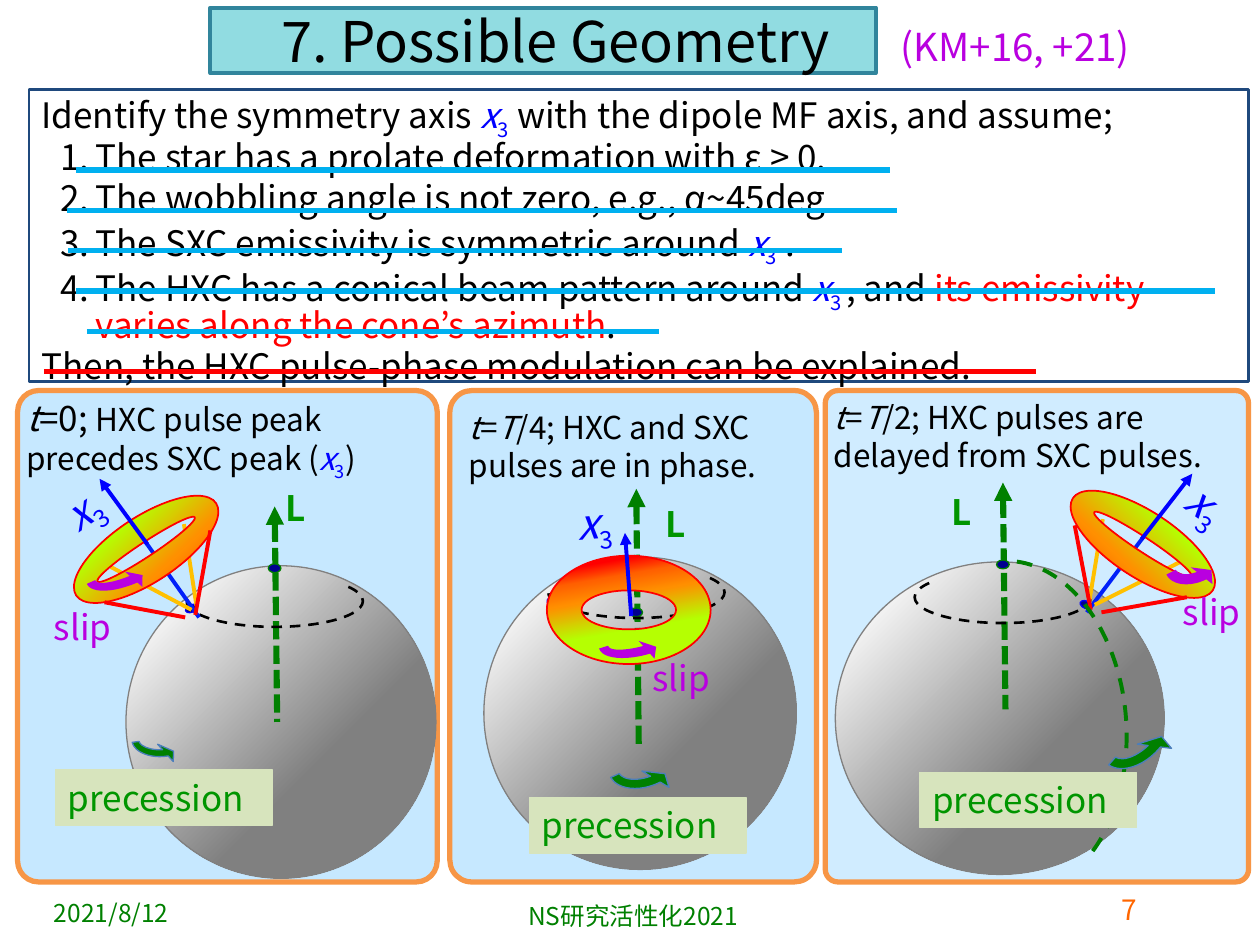
import pptx
import pptx.dml.color
import pptx.enum.dml
import pptx.enum.shapes
import pptx.enum.text
import pptx.oxml
import pptx.oxml.ns
import pptx.util
from lxml import etree

Inches, Pt = pptx.util.Inches, pptx.util.Pt
RGB = pptx.dml.color.RGBColor.from_string
SHAPE = pptx.enum.shapes.MSO_SHAPE
DASH = pptx.enum.dml.MSO_LINE
ALIGN = pptx.enum.text.PP_ALIGN
ANCHOR = pptx.enum.text.MSO_ANCHOR
qn = pptx.oxml.ns.qn

FONT = "Noto Sans CJK JP"
BLACK, BLUE, RED = RGB("000000"), RGB("0000FF"), RGB("FF0000")
GREEN, LEAF, PURPLE = RGB("008000"), RGB("009500"), RGB("B900E0")
ORANGE, AMBER, CYAN = RGB("F79646"), RGB("FFC000"), RGB("00B0F0")
NAVY, GRAY, STEEL = RGB("000090"), RGB("808080"), RGB("4B7EBC")
SKY, TEAL, TEAL_EDGE = RGB("98D6FF"), RGB("00AFBA"), RGB("31859C")
FRAME, SAGE, AXIS_BLUE, PAGE = RGB("1F497D"), RGB("D7E4BD"), RGB("0020F9"), RGB("FF6600")

# ---- Content: text is a list of (wording, format) runs ----
VAR = {"italic": True}
BLUE_VAR = {"italic": True, "color": BLUE}
BLUE_SUB = {"sub": True, "color": BLUE}
X3 = [("x", BLUE_VAR), ("3", BLUE_SUB)]
INTRO = [("Identify the symmetry axis ", {}), *X3, (" with the dipole MF axis, and assume;", {})]
ASSUMPTIONS = [
    [("The star has a prolate deformation with ε > 0.", {})],
    [("The wobbling angle is not zero, e.g., α~45deg", {})],
    [("The SXC emissivity is symmetric around ", {}), *X3, (" .", {})],
    [("The HXC has a conical beam pattern around ", {}), ("x", BLUE_VAR), ("3 ", BLUE_SUB),
     (", and ", {}), ("its emissivity varies along the cone’s azimuth", {"color": RED}), (".", {})],
]
CONCLUSION = [("Then, the HXC pulse-phase modulation can be explained.", {})]
BIG = {"size": Pt(20)}

# One entry per phase; side is where the cone leans, spin is (x, top, bottom)
PHASES = [
    dict(caption=[("t", {**VAR, **BIG}), ("=0; ", BIG),
                  ("HXC pulse peak precedes SXC peak (", {}), *X3, (")", {})],
         caption_at=(0.11, 3.1), panel=(0.14, 3.33), corner=0.05, side=-1,
         star=(1, 4.49, 2.46), spin=(2.18, 4.02, 5.73), x3=(0.41, 3.76), x3_turn=324.4,
         L=(2.17, 3.81), slip=(0.33, 4.76), slip_arrow=(0.6, 4.27, 0.87, 0.42), slip_turn=155.9,
         turn=(0.98, 5.65, 0.61, 0.42), turn_angle=176.5, tag=(0.44, 6.11)),
    dict(caption=[("t", VAR), ("=", {}), ("T", VAR), ("/4; HXC and SXC pulses are in phase.", {})],
         caption_at=(3.62, 3.19), panel=(3.57, 2.91), corner=0.06, side=0,
         star=(3.84, 4.42, 2.48), spin=(5.05, 3.88, 5.95), x3=(4.48, 3.89), x3_turn=355.2,
         L=(5.18, 3.94), slip=(5.08, 5.16), slip_arrow=(4.68, 4.82, 0.88, 0.43), slip_turn=162.9,
         turn=(4.73, 5.76, 0.78, 0.57), turn_angle=159.6, tag=(4.2, 6.33)),
    dict(caption=[("t", VAR), ("=", {}), ("T", VAR), ("/2; HXC pulses are delayed from SXC pulses.", {})],
         caption_at=(6.52, 3.11), panel=(6.55, 3.36), corner=0.03, side=1,
         star=(6.63, 4.46, 2.61), spin=(7.96, 3.83, 5.63), x3=(9.33, 3.79), x3_turn=35.6,
         L=(7.45, 3.84), slip=(9.29, 4.64), slip_arrow=(9.16, 4.19, 0.68, 0.49), slip_turn=152.7,
         turn=(8.59, 5.51, 0.86, 0.62), turn_angle=135.6, tag=(7.3, 6.13)),
]
# Cone lines as they lean left; the last phase mirrors them
CONE_BACK = [("stem", (1.14, 4.28), (1.58, 4.9)), ("inner", (1.46, 4.16), (1.56, 4.81)),
             ("inner", (0.88, 4.5), (1.52, 4.84))]
CONE_FRONT = [("x3 axis", (0.79, 3.8), (1.17, 4.32)), ("outer", (0.83, 4.78), (1.47, 4.9)),
              ("outer", (1.67, 4.21), (1.55, 4.88))]
STROKES = [(0.6, 7.06), (0.53, 7.12), (0.54, 6.68), (0.6, 9.64), (0.69, 5.23), (0.35, 8.22)]

# ---- Styles ----
LIGHT = dict(stops=[(37, GRAY), (91, RGB("FFFFFF"))],
             way='<a:path path="circle"><a:fillToRect l="100000" t="100000"/></a:path>')
GLOW = dict(stops=[(12, RED), (24, RGB("FF6000")), (39, RGB("FF9000")), (65, RGB("B5FF02"))],
            way='<a:lin ang="15600000" scaled="0"/>')
FIGURES = {
    "panel": dict(kind=SHAPE.ROUNDED_RECTANGLE, fill=SKY, line=(ORANGE, 3)),
    "star": dict(kind=SHAPE.OVAL, gradient=LIGHT, line=(GRAY, 0.75)),
    "pole": dict(kind=SHAPE.OVAL, fill=NAVY, line=(GREEN, 0.75)),
    "apex": dict(kind=SHAPE.OVAL, fill=NAVY, line=(BLUE, 0.75)),
    "orbit": dict(kind=SHAPE.ARC, line=(BLACK, 1.5, DASH.DASH), adj=[101.44, 0], rot=180),
    "meridian": dict(kind=SHAPE.ARC, line=(GREEN, 2.25, DASH.DASH), adj=[71.37, 160.16]),
    "ring": dict(kind=SHAPE.DONUT, gradient=GLOW, line=(RED, 1)),
    "slip arrow": dict(kind=SHAPE.CIRCULAR_ARROW, fill=PURPLE, flip=True,
                       adj=[0.17, 21.89, 154.97, 107.94, 0.22]),
    "turn": dict(kind=SHAPE.CIRCULAR_ARROW, fill=GREEN, line=(STEEL, 0.75), flip=True,
                 adj=[0.13, 17.04, 168.09, 110.51, 0.22]),
}
LINES = {
    "spin": dict(line=(GREEN, 3.5, DASH.SQUARE_DOT), arrow=True),
    "x3 axis": dict(line=(BLUE, 2.25), arrow=True),
    "stem": dict(line=(AXIS_BLUE, 2.25)),
    "inner": dict(line=(AMBER, 2.25)),
    "outer": dict(line=(RED, 2.25)),
    "strike": dict(line=(CYAN, 3)),
    "verdict": dict(line=(RED, 3)),
}


# ---- Helpers ----
def paint(shape, color, alpha=100):
    shape.fill.solid()
    shape.fill.fore_color.rgb = color
    if alpha < 100:
        clr = shape._element.spPr.find(qn("a:solidFill"))[0]
        etree.SubElement(clr, qn("a:alpha")).set("val", str(alpha * 1000))


def paint_gradient(shape, stops, way):
    marks = "".join(f'<a:gs pos="{at * 1000}"><a:srgbClr val="{color}"/></a:gs>' for at, color in stops)
    shape._element.spPr.find(qn("a:prstGeom")).addnext(pptx.oxml.parse_xml(
        f'<a:gradFill {pptx.oxml.ns.nsdecls("a")} rotWithShape="1"><a:gsLst>{marks}</a:gsLst>{way}</a:gradFill>'))


def stroke(shape, color, width, dash=None):
    shape.line.color.rgb, shape.line.width = color, Pt(width)
    if dash:
        shape.line.dash_style = dash


def write(paragraph, runs, size, color):
    for wording, form in runs:
        run = paragraph.add_run()
        run.text = wording
        values = {"name": FONT, "size": Pt(size), **form}
        run.font.color.rgb = values.pop("color", color)
        if values.pop("sub", False):
            run.font._element.set("baseline", "-25000")
        for key, value in values.items():
            setattr(run.font, key, value)
        etree.SubElement(run.font._element, qn("a:ea")).set("typeface", FONT)


def place(shape, *box):
    shape.left, shape.top, shape.width, shape.height = map(Inches, box)


def centered(x, y, width, height):
    return x - width / 2, y - height / 2, width, height


def add_figure(slide, part, box, **extra):
    style = {**FIGURES[part], **extra}
    figure = slide.shapes.add_shape(style["kind"], *map(Inches, box))
    figure.shadow.inherit = False
    for i, value in enumerate(style.get("adj", ())):
        figure.adjustments[i] = value
    if "gradient" in style:
        paint_gradient(figure, **style["gradient"])
    elif "fill" in style:
        paint(figure, style["fill"], style.get("alpha", 100))
    else:
        figure.fill.background()
    if "line" in style:
        stroke(figure, *style["line"])
    else:
        figure.line.fill.background()
    figure.rotation = style.get("rot", 0)
    if style.get("flip"):
        figure._element.spPr.xfrm.set("flipH", "1")


def add_line(slide, part, start, end):
    link = slide.shapes.add_connector(pptx.enum.shapes.MSO_CONNECTOR.STRAIGHT, *map(Inches, (*start, *end)))
    stroke(link, *LINES[part]["line"])
    if LINES[part].get("arrow"):
        etree.SubElement(link.line._get_or_add_ln(), qn("a:headEnd")).set("type", "triangle")
    etree.SubElement(link._element.spPr, qn("a:effectLst"))


def add_label(slide, text, box, size, color, fill=None, rot=0, anchor=ANCHOR.TOP, align=ALIGN.LEFT):
    label = slide.shapes.add_textbox(*map(Inches, box))
    label.rotation = rot
    if fill:
        paint(label, fill)
        stroke(label, fill, 0.75)
    frame = label.text_frame
    frame.word_wrap, frame.vertical_anchor = True, anchor
    frame.paragraphs[0].alignment = align
    write(frame.paragraphs[0], [(text, {})] if isinstance(text, str) else text, size, color)


# ---- Parts of the slide ----
def fill_placeholders(slide):
    title, body = slide.placeholders
    place(title, 1.67, 0.06, 5.28, 0.52)
    paint(title, TEAL, 43)
    stroke(title, TEAL_EDGE, 2.25)
    title.text_frame.margin_left = Inches(0.3)
    write(title.text_frame.paragraphs[0], [("7. Possible Geometry", {})], 32, BLACK)

    place(body, 0.23, 0.71, 9.68, 2.32)
    stroke(body, FRAME, 1.5)
    for i, runs in enumerate([INTRO, *ASSUMPTIONS, CONCLUSION]):
        row = body.text_frame.add_paragraph() if i else body.text_frame.paragraphs[0]
        row.line_spacing, row.space_before = 0.85, Pt(3)
        props = row._p.get_or_add_pPr()
        numbered = runs in ASSUMPTIONS
        props.set("marL", str(Inches(0.43 if numbered else 0)))
        props.set("indent", str(Inches(-0.28 if numbered else 0)))
        if numbered:
            etree.SubElement(props, qn("a:buFont")).set("typeface", FONT)
            etree.SubElement(props, qn("a:buAutoNum")).set("type", "arabicPeriod")
        else:
            etree.SubElement(props, qn("a:buNone"))
        write(row, runs, 20, BLACK)
    for part in (title, body):
        part.text_frame.auto_size = pptx.enum.text.MSO_AUTO_SIZE.NONE


def draw_phase(slide, phase):
    side, mirrored = phase["side"], phase["side"] > 0
    x, spin_top, spin_bottom = phase["spin"]
    left, top, width = phase["star"]

    def lean(point):
        return (10.3 - 1.06 * point[0], point[1] - 0.04) if mirrored else point

    def add_cone(parts):
        for part, start, end in parts if side else []:
            add_line(slide, part, lean(start), lean(end))

    panel_left, panel_width = phase["panel"]
    add_figure(slide, "panel", (panel_left, 3.1, panel_width, 3.9), adj=[phase["corner"]],
               alpha=45 if mirrored else 55)
    add_figure(slide, "star", (left, top, width, 2.48), flip=mirrored)
    add_line(slide, "spin", (x, spin_top), (x + 0.02, spin_bottom))
    add_figure(slide, "pole", centered(x, top + (0.02 if side else 0.44), 0.1, 0.07))
    add_label(slide, X3, (*phase["x3"], 0.6, 0.5), 24, BLUE, rot=phase["x3_turn"])
    add_figure(slide, "orbit", centered(x, top + 0.28, 1.4, 0.41), flip=mirrored)
    add_figure(slide, "apex", centered(x + (side or -1) * 0.66, top + 0.34, 0.1, 0.06), rot=22 if mirrored else 338)
    add_cone(CONE_BACK)
    if side:
        add_figure(slide, "ring", centered(*lean((1.16, 4.36)), 1.33, 0.52), adj=[0.39],
                   rot=33.4 * side, flip=mirrored)
    else:
        add_figure(slide, "ring", centered(x - 0.06, top + 0.42, 1.3, 0.86), adj=[0.32], rot=180)
        add_line(slide, "x3 axis", (x - 0.09, top - 0.19), (x - 0.04, top + 0.47))
    add_cone(CONE_FRONT)
    if mirrored:
        add_figure(slide, "meridian", (7.13, 4.45, 1.81, 2.64), rot=356, flip=True)
    add_figure(slide, "slip arrow", phase["slip_arrow"], rot=phase["slip_turn"])
    add_figure(slide, "turn", phase["turn"], rot=phase["turn_angle"])
    add_label(slide, phase["caption"], (*phase["caption_at"], panel_width, 0.71), 18, BLACK)
    add_label(slide, [("L", {"bold": True})], (*phase["L"], 0.56, 0.43), 20, LEAF)
    add_label(slide, "precession", (*phase["tag"], 1.72, 0.44), 20, LEAF, fill=SAGE)
    add_label(slide, "slip", (*phase["slip"], 0.67, 0.44), 20, PURPLE)


def main():
    deck = pptx.Presentation()
    deck.slide_width, deck.slide_height = Inches(10), Inches(7.5)
    slide = deck.slides.add_slide(deck.slide_layouts[1])
    fill_placeholders(slide)
    for phase in PHASES:
        draw_phase(slide, phase)
    for i, (start, end) in enumerate(STROKES):
        y = 1.35 + 0.32 * i
        add_line(slide, "verdict" if i == len(STROKES) - 1 else "strike", (start, y), (end, y))
    add_label(slide, "(KM+16, +21)", (7.05, 0.13, 2.35, 0.47), 22, PURPLE)
    # Footer
    add_label(slide, "2021/8/12", (0.33, 7.04, 2.33, 0.4), 14, GREEN, anchor=ANCHOR.MIDDLE)
    add_label(slide, "NS研究活性化2021", (3.44, 7.07, 3.17, 0.4), 14, GREEN,
              anchor=ANCHOR.MIDDLE, align=ALIGN.CENTER)
    add_label(slide, "7", (6.79, 7.02, 2.33, 0.4), 16, PAGE, anchor=ANCHOR.MIDDLE, align=ALIGN.RIGHT)
    deck.save("out.pptx")


if __name__ == "__main__":
    main()
